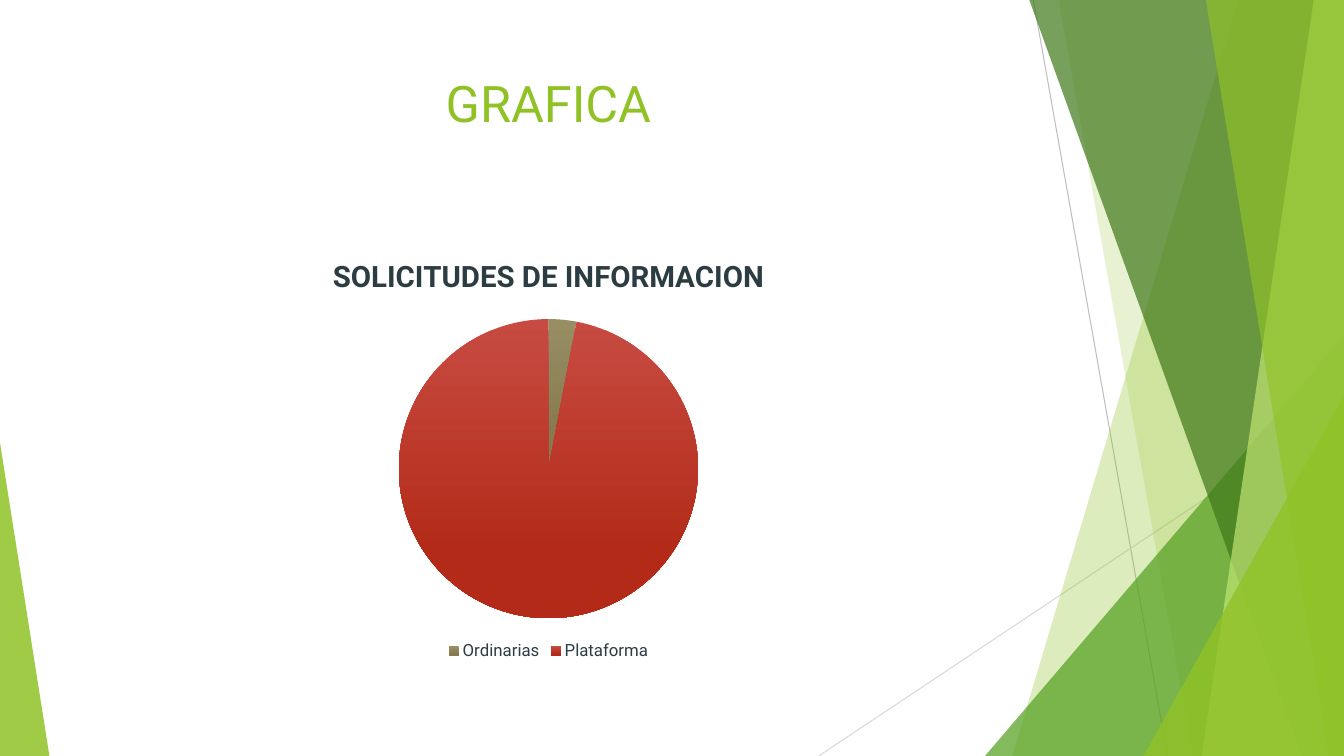
from dataclasses import dataclass

from lxml.etree import SubElement
from pptx import Presentation
from pptx.chart.data import CategoryChartData
from pptx.dml.color import RGBColor as Rgb
from pptx.enum.chart import XL_CHART_TYPE as ChartType, XL_LEGEND_POSITION as LegendPosition
from pptx.enum.shapes import MSO_CONNECTOR as Connector, MSO_SHAPE as Shape
from pptx.enum.text import MSO_ANCHOR as Anchor, PP_ALIGN as Align
from pptx.oxml import parse_xml
from pptx.oxml.ns import nsdecls, qn
from pptx.util import Inches, Pt


@dataclass(frozen=True)
class Theme:
    font: str = "Roboto"
    lime: str = "90C226"
    leaf: str = "54A021"
    forest: str = "3F7819"
    pale: str = "C0E474"
    grey: str = "BFBFBF"
    light_grey: str = "D9D9D9"
    ink: str = "2C3C43"
    slices: tuple = (("988E64", "857B4E"), ("C74B42", "B32B18"))
    title_size: int = 36
    chart_title_size: int = 21
    legend_size: int = 12
    line_width: float = 0.75


class SlideBuilder:
    """Draw themed elements placed in percentages of the slide's size."""

    def __init__(self, presentation, theme):
        self.theme = theme
        self.width = presentation.slide_width
        self.height = presentation.slide_height
        self.slide = presentation.slides.add_slide(presentation.slide_layouts[5])
        self.shapes = self.slide.shapes

    def box(self, left, top, width, height):
        return (*self.point(left, top), *self.point(width, height))

    def point(self, x, y):
        return round(self.width * x / 100), round(self.height * y / 100)

    def style_font(self, font, size, color, bold=False):
        font.name = self.theme.font
        font.size = Pt(size)
        font.bold = bold
        font.color.rgb = Rgb.from_string(color)

    def paint(self, shape, color, opacity):
        shape.shadow.inherit = False
        shape.line.fill.background()
        shape.fill.solid()
        shape.fill.fore_color.rgb = Rgb.from_string(color)
        for node in shape._element.spPr.iter(qn("a:srgbClr")):
            SubElement(node, qn("a:alpha"), val=str(opacity * 1000))

    def title(self, text, *box):
        title = self.shapes.title
        title.left, title.top, title.width, title.height = self.box(*box)
        frame = title.text_frame
        frame.text = text
        frame.vertical_anchor = Anchor.TOP
        paragraph = frame.paragraphs[0]
        paragraph.alignment = Align.CENTER
        self.style_font(paragraph.runs[0].font, self.theme.title_size, self.theme.lime)

    def line(self, color, start, end):
        line = self.shapes.add_connector(Connector.STRAIGHT, *self.point(*start), *self.point(*end))
        line.line.color.rgb = Rgb.from_string(color)
        line.line.width = Pt(self.theme.line_width)
        SubElement(line._element.spPr, qn("a:effectLst"))

    def band(self, color, opacity, top_left, bottom_left):
        builder = self.shapes.build_freeform(*self.point(top_left, 0))
        corners = [(100, 0), (100, 100), (bottom_left, 100)]
        builder.add_line_segments([self.point(*corner) for corner in corners])
        self.paint(builder.convert_to_shape(), color, opacity)

    def triangle(self, color, opacity, apex, left, top, width):
        triangle = self.shapes.add_shape(
            Shape.ISOSCELES_TRIANGLE, *self.box(left, top, width, 100 - top))
        triangle.adjustments[0] = apex
        self.paint(triangle, color, opacity)

    def pie(self, title, values, box, plot):
        data = CategoryChartData()
        data.categories = list(values)
        data.add_series("Series 1", list(values.values()))
        chart = self.shapes.add_chart(ChartType.PIE, *self.box(*box), data).chart
        theme = self.theme
        self.style_font(chart.font, theme.legend_size, theme.ink)

        chart.has_title = True
        chart.chart_title.include_in_layout = False
        frame = chart.chart_title.text_frame
        frame.text = title
        self.style_font(
            frame.paragraphs[0].runs[0].font, theme.chart_title_size, theme.ink, bold=True)

        chart.has_legend = True
        chart.legend.position = LegendPosition.BOTTOM
        chart.legend.include_in_layout = False
        self.style_font(chart.legend.font, theme.legend_size, theme.ink)

        chart.plots[0].vary_by_categories = True
        for index, colors in enumerate(theme.slices):
            slice_format = chart.plots[0].series[0].points[index].format
            slice_format.line.fill.background()
            slice_format.fill.gradient()
            slice_format.fill.gradient_angle = 270
            for stop, color, position in zip(slice_format.fill.gradient_stops, colors, (0, 0.78)):
                stop.color.rgb = Rgb.from_string(color)
                stop.position = position
        self.place_plot(chart, plot)

    def place_plot(self, chart, plot):
        area = chart._chartSpace.chart.plotArea
        for layout in area.findall(qn("c:layout")):
            area.remove(layout)
        sides = "".join(f'<c:{side} val="{share}"/>' for side, share in zip("xywh", plot))
        area.insert(0, parse_xml(
            f'<c:layout {nsdecls("c")}><c:manualLayout><c:layoutTarget val="inner"/>'
            f'<c:xMode val="edge"/><c:yMode val="edge"/>{sides}</c:manualLayout></c:layout>'))


def main():
    presentation = Presentation()
    presentation.slide_width = Inches(13.33)
    presentation.slide_height = Inches(7.5)
    theme = Theme()
    builder = SlideBuilder(presentation, theme)

    builder.line(theme.grey, (76.89, 0), (86.87, 100))
    builder.line(theme.light_grey, (100, 53.73), (60.92, 100))
    builder.band(theme.lime, 30, 92.12, 75.32)
    builder.band(theme.lime, 20, 78.77, 88.75)
    builder.triangle(theme.leaf, 72, 1, 73.29, 44.4, 26.71)
    builder.band(theme.forest, 70, 76.59, 96.85)
    builder.band(theme.pale, 70, 97.75, 89.42)
    builder.band(theme.lime, 65, 89.72, 98.87)
    builder.triangle(theme.lime, 80, 1, 85.07, 52.4, 14.93)
    builder.triangle(theme.lime, 85, 0, 0, 58.53, 3.68)

    left, width = 5.55, 70.52
    builder.title("GRAFICA", left, 8.93, width, 19.2)
    builder.pie(
        "SOLICITUDES DE INFORMACION",
        {"Ordinarias": 3, "Plataforma": 97},
        box=(left, 31.47, width, 56.53),
        plot=(0.34, 0.19, 0.32, 0.7),
    )
    presentation.save("out.pptx")


if __name__ == "__main__":
    main()
